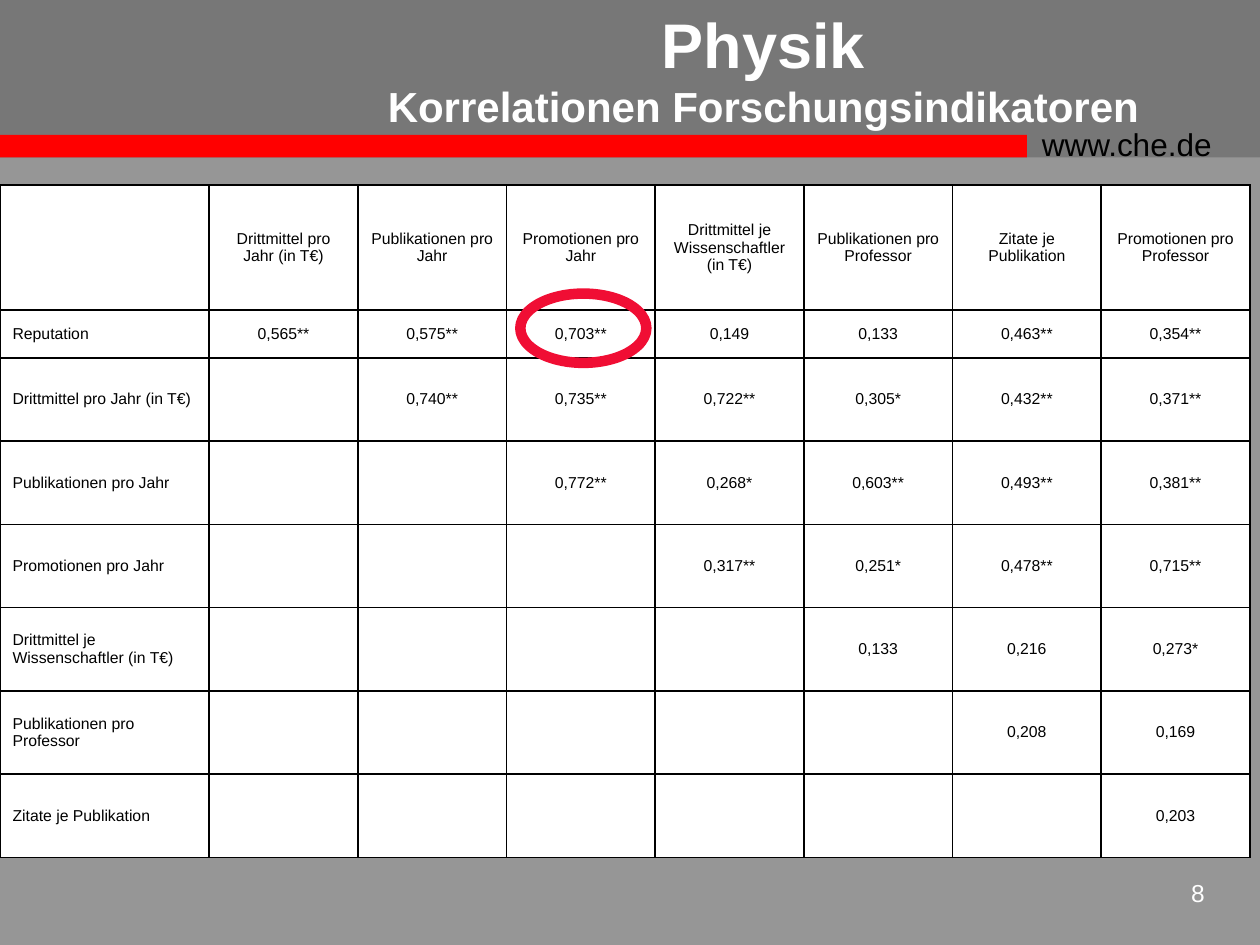
from dataclasses import dataclass

from lxml import etree
from pptx import Presentation
from pptx.dml.color import RGBColor
from pptx.enum.shapes import MSO_SHAPE
from pptx.enum.text import MSO_ANCHOR, PP_ALIGN
from pptx.oxml.ns import qn
from pptx.util import Inches, Pt

RECTANGLE, OVAL = MSO_SHAPE.RECTANGLE, MSO_SHAPE.OVAL
LEFT, CENTER, RIGHT = PP_ALIGN.LEFT, PP_ALIGN.CENTER, PP_ALIGN.RIGHT
TOP, MIDDLE = MSO_ANCHOR.TOP, MSO_ANCHOR.MIDDLE

# The page is a grid of 100 columns by 75 rows
GRID_COLUMNS, GRID_ROWS = 100, 75


@dataclass(frozen=True)
class Theme:
    font: str = "Arial"
    background: str = "969696"
    banner: str = "777777"
    stripe: str = "FF0000"
    highlight: str = "F00E34"
    light: str = "FFFFFF"
    dark: str = "000000"
    title_size: int = 36
    subtitle_size: int = 24
    address_size: int = 18
    number_size: int = 14
    table_size: int = 9
    border_width: int = 1
    highlight_width: int = 6


def write_text(frame, lines, color, font, align=LEFT, anchor=TOP, bold=None):
    """Fill a frame with one paragraph; lines are (text, size) pairs."""
    frame.word_wrap = True
    frame.vertical_anchor = anchor
    para = frame.paragraphs[0]
    para.alignment = align
    for index, (text, size) in enumerate(lines):
        if index:
            para.add_line_break()
        span = para.add_run()
        span.text = text
        span.font.name = font
        span.font.size = Pt(size)
        span.font.bold = bold
        span.font.color.rgb = RGBColor.from_string(color)


class SlideBuilder:
    def __init__(self, deck, theme):
        self.theme = theme
        self.column = deck.slide_width / GRID_COLUMNS
        self.row = deck.slide_height / GRID_ROWS
        self.page = deck.slides.add_slide(deck.slide_layouts[6])
        fill = self.page.background.fill
        fill.solid()
        fill.fore_color.rgb = RGBColor.from_string(theme.background)

    def place(self, left, top, width, height):
        return (round(left * self.column), round(top * self.row),
                round(width * self.column), round(height * self.row))

    def shape(self, kind, area, fill=None, line=None, line_width=1):
        shape = self.page.shapes.add_shape(kind, *self.place(*area))
        shape.shadow.inherit = False
        if fill:
            shape.fill.solid()
            shape.fill.fore_color.rgb = RGBColor.from_string(fill)
        else:
            shape.fill.background()
        if line:
            shape.line.color.rgb = RGBColor.from_string(line)
            shape.line.width = Pt(line_width)
        else:
            shape.line.fill.background()

    def text(self, area, lines, color, **style):
        box = self.page.shapes.add_textbox(*self.place(*area))
        write_text(box.text_frame, lines, color, self.theme.font, **style)

    def border(self, cell):
        properties = cell._tc.get_or_add_tcPr()
        for index, side in enumerate(("a:lnL", "a:lnR", "a:lnT", "a:lnB")):
            line = etree.Element(qn(side), w=str(Pt(self.theme.border_width)))
            solid = etree.SubElement(line, qn("a:solidFill"))
            etree.SubElement(solid, qn("a:srgbClr"), val=self.theme.dark)
            properties.insert(index, line)

    def table(self, left, top, widths, heights, content):
        area = self.place(left, top, sum(widths), sum(heights))
        table = self.page.shapes.add_table(len(heights), len(widths), *area).table
        for column, width in zip(table.columns, widths):
            column.width = round(width * self.column)
        for row, height, texts in zip(table.rows, heights, content):
            row.height = round(height * self.row)
            for index, (cell, text) in enumerate(zip(row.cells, texts)):
                cell.fill.solid()
                cell.fill.fore_color.rgb = RGBColor.from_string(self.theme.light)
                self.border(cell)
                cell.vertical_anchor = MIDDLE
                if text:
                    write_text(cell.text_frame, [(text, self.theme.table_size)],
                               self.theme.dark, self.theme.font,
                               align=CENTER if index else LEFT, anchor=MIDDLE)


INDICATORS = [
    "Drittmittel pro Jahr (in T€)", "Publikationen pro Jahr",
    "Promotionen pro Jahr", "Drittmittel je Wissenschaftler (in T€)",
    "Publikationen pro Professor", "Zitate je Publikation",
    "Promotionen pro Professor",
]
# Upper triangle: each row ends in the last column
CORRELATIONS = [
    ["0,565**", "0,575**", "0,703**", "0,149", "0,133", "0,463**", "0,354**"],
    ["0,740**", "0,735**", "0,722**", "0,305*", "0,432**", "0,371**"],
    ["0,772**", "0,268*", "0,603**", "0,493**", "0,381**"],
    ["0,317**", "0,251*", "0,478**", "0,715**"],
    ["0,133", "0,216", "0,273*"],
    ["0,208", "0,169"],
    ["0,203"],
]


def main():
    deck = Presentation()
    deck.slide_width, deck.slide_height = Inches(10), Inches(7.5)
    theme = Theme()
    slide = SlideBuilder(deck, theme)

    # Banner with red stripe and web address
    slide.shape(RECTANGLE, (0, 0, GRID_COLUMNS, 12.5), fill=theme.banner)
    slide.shape(RECTANGLE, (0, 10.7, 81.5, 1.8), fill=theme.stripe)
    slide.text((81.7, 9.4, 17.5, 4), [("www.che.de", theme.address_size)], theme.dark)

    # Page number and title
    slide.text((90.8, 69.2, 5.8, 4.2), [("8", theme.number_size)], theme.light,
               align=RIGHT)
    slide.text((24.8, 0, 71.6, 10.8),
               [("Physik", theme.title_size),
                ("Korrelationen Forschungsindikatoren", theme.subtitle_size)],
               theme.light, align=CENTER, anchor=MIDDLE, bold=True)

    # Correlation table
    count = len(INDICATORS)
    names = ["Reputation"] + INDICATORS[:-1]
    content = [[""] + INDICATORS]
    for name, values in zip(names, CORRELATIONS):
        content.append([name] + [""] * (count - len(values)) + values)
    widths = [16.6] + [11.8] * count
    heights = [9.9, 3.8] + [6.61] * (count - 1)
    slide.table(0, 14.7, widths, heights, content)

    # Ring around the strongest link to reputation
    slide.shape(OVAL, (41.3, 23.3, 10, 5.5), line=theme.highlight,
                line_width=theme.highlight_width)

    deck.save("out.pptx")


if __name__ == "__main__":
    main()
